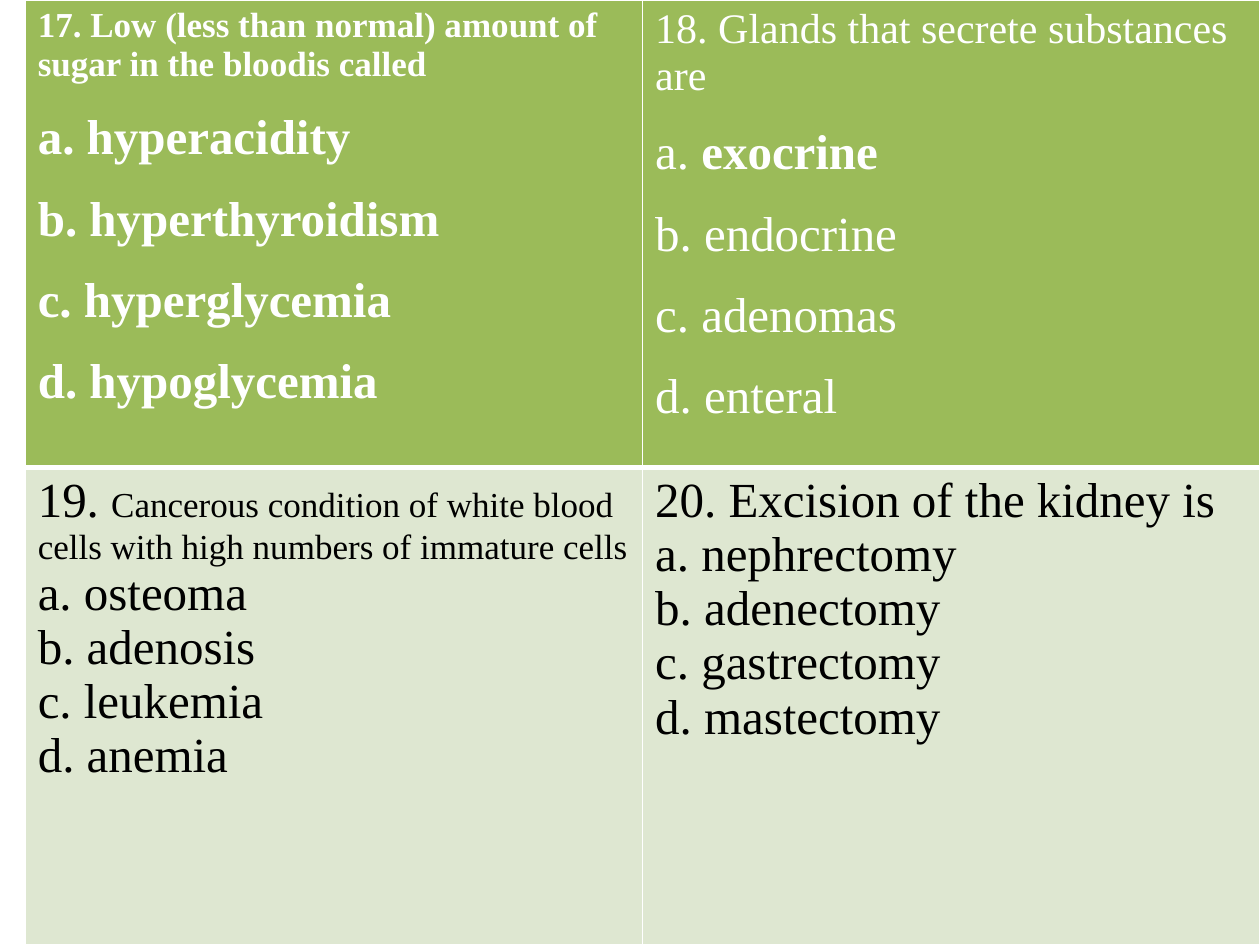
from dataclasses import dataclass

from lxml import etree
from pptx import Presentation
from pptx.dml.color import RGBColor
from pptx.oxml.ns import qn
from pptx.slide import Slide
from pptx.util import Pt

BLANK_LAYOUT = 6
WHITE, BLACK = "FFFFFF", "000000"
HEADER_GREEN, PALE_GREEN = "9BBB59", "DEE7D1"
THIN, THICK = 1, 3


def rgb(hex_colour):
    return RGBColor.from_string(hex_colour)


@dataclass
class QuizSlide:
    slide: Slide
    font: str = "Times New Roman"
    border_colour: str = WHITE

    def table(self, left, top, column_widths, row_heights):
        table = self.slide.shapes.add_table(
            len(row_heights), len(column_widths), Pt(left), Pt(top),
            Pt(sum(column_widths)), Pt(sum(row_heights))).table
        table.horz_banding = False
        for column, width in zip(table.columns, column_widths):
            column.width = Pt(width)
        for row, height in zip(table.rows, row_heights):
            row.height = Pt(height)
        return table

    def cell(self, cell, paragraphs, fill, colour, top_border, bottom_border):
        """Fill a cell with paragraphs, each a line spacing and its pieces."""
        self.borders(cell, top_border, bottom_border)
        cell.fill.solid()
        cell.fill.fore_color.rgb = rgb(fill)
        frame = cell.text_frame
        for index, (spacing, pieces) in enumerate(paragraphs):
            paragraph = frame.add_paragraph() if index else frame.paragraphs[0]
            paragraph.line_spacing = spacing
            for wording, size, bold in pieces:
                self.piece(paragraph, wording, size, bold, colour)

    def piece(self, paragraph, wording, size, bold, colour):
        """Add equally styled text, with a line break at each newline."""
        for index, line in enumerate(wording.split("\n")):
            if index:
                paragraph.add_line_break()
            if line:
                run = paragraph.add_run()
                run.text = line
                run.font.name = self.font
                run.font.size = Pt(size)
                run.font.bold = bold
                run.font.color.rgb = rgb(colour)

    def borders(self, cell, top, bottom):
        properties = cell._tc.get_or_add_tcPr()
        widths = {"a:lnL": THIN, "a:lnR": THIN, "a:lnT": top, "a:lnB": bottom}
        for side, width in widths.items():
            line = etree.SubElement(properties, qn(side), w=str(Pt(width)))
            solid = etree.SubElement(line, qn("a:solidFill"))
            etree.SubElement(solid, qn("a:srgbClr"), val=self.border_colour)


QUESTIONS = [
    [
        [(1.0, [("17. Low (less than normal) amount of", 20, True)]),
         (1.0, [("sugar in the bloodis called", 20, True)]),
         (1.5, [("a. hyperacidity\nb. hyperthyroidism\n"
                 "c. hyperglycemia\nd. hypoglycemia", 28, True)])],
        [(1.0, [("18. Glands that secrete substances are", 24, False)]),
         (1.5, [("a. ", 28, False), ("exocrine\n", 28, True),
                ("b. endocrine\nc. adenomas\nd. enteral", 28, False)])],
    ],
    [
        [(1.0, [("19. ", 28, False),
                ("Cancerous condition of white blood cells with high "
                 "numbers of immature cells\n", 20, False),
                ("a. osteoma\nb. adenosis\nc. leukemia\nd. anemia",
                 28, False)])],
        [(1.0, [("20. Excision of the kidney is\na. nephrectomy\n"
                 "b. adenectomy\nc. gastrectomy\nd. mastectomy",
                 28, False)])],
    ],
]
# fill, text colour, top border, bottom border
ROW_STYLES = [
    (HEADER_GREEN, WHITE, THIN, THICK),
    (PALE_GREEN, BLACK, THICK, THIN),
]


def main():
    presentation = Presentation()
    presentation.slide_width, presentation.slide_height = Pt(720), Pt(540)
    layout = presentation.slide_layouts[BLANK_LAYOUT]
    quiz = QuizSlide(presentation.slides.add_slide(layout))
    table = quiz.table(14.4, 0, [352.8, 352.8], [267, 273])
    for row, (questions, style) in enumerate(zip(QUESTIONS, ROW_STYLES)):
        for column, paragraphs in enumerate(questions):
            quiz.cell(table.cell(row, column), paragraphs, *style)
    presentation.save("out.pptx")


if __name__ == "__main__":
    main()
